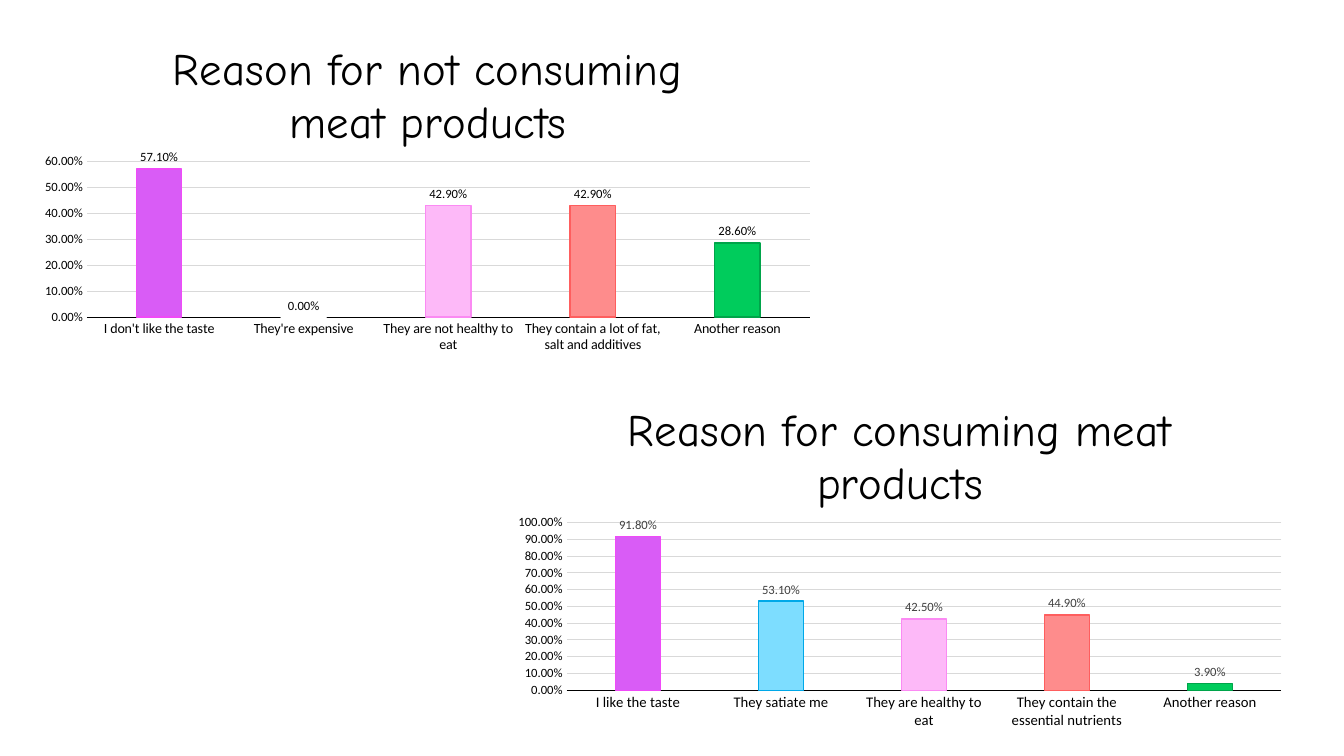
from pptx import Presentation
from pptx.chart.data import CategoryChartData
from pptx.dml.color import RGBColor
from pptx.enum.chart import XL_CHART_TYPE, XL_LABEL_POSITION, XL_TICK_MARK
from pptx.oxml import parse_xml
from pptx.oxml.ns import nsdecls
from pptx.util import Pt

COLUMNS = XL_CHART_TYPE.COLUMN_CLUSTERED
OUTSIDE_END = XL_LABEL_POSITION.OUTSIDE_END
NO_TICK = XL_TICK_MARK.NONE

COLORS = {
    "text": "000000", "muted": "404040", "grid": "D9D9D9", "series": "4FD1FF",
    "purple": "D95CF6", "purple_edge": "F04AF8",
    "blue": "7DDDFF", "blue_edge": "00A8E8",
    "pink": "FDB9F8", "pink_edge": "FB8AF3",
    "red": "FE8C8C", "red_edge": "FE5E5E",
    "green": "00CC5C", "green_edge": "00A44A",
    "white": "FFFFFF", "white_edge": "FFFFFF",
}
BODY_FONT, TITLE_FONT = "Calibri", "Comic Neue"
PERCENT = "0.00%"

CHARTS = [
    {
        "title": "Reason for consuming meat products",
        "box": (359.3, 271.4, 567.4, 254.9),
        "plot": (0.08, 0.4, 0.9, 0.47),
        "top": 1.0, "category_size": 10.5, "label_color": "muted",
        "bars": [
            ("I like the taste", 0.918, "purple"),
            ("They satiate me", 0.531, "blue"),
            ("They are healthy to eat", 0.425, "pink"),
            ("They contain the essential nutrients", 0.449, "red"),
            ("Another reason", 0.039, "green"),
        ],
    },
    {
        "title": "Reason for not consuming meat products",
        "box": (22.3, 13.7, 567.4, 241.9),
        "plot": (0.07, 0.42, 0.91, 0.46),
        "top": 0.6, "category_size": 10, "label_color": "text",
        "bars": [
            ("I don't like the taste", 0.571, "purple"),
            ("They're expensive", 0, "white"),
            ("They are not healthy to eat", 0.429, "pink"),
            ("They contain a lot of fat, salt and additives", 0.429, "red"),
            ("Another reason", 0.286, "green"),
        ],
    },
]


def rgb(name):
    return RGBColor.from_string(COLORS[name])


def set_font(font, size, color="text", name=BODY_FONT):
    font.size, font.name, font.bold = Pt(size), name, False
    font.color.rgb = rgb(color)


def set_fill(fill, color):
    fill.solid()
    fill.fore_color.rgb = rgb(color)


def set_line(line, color, width):
    set_fill(line.fill, color)
    line.width = Pt(width)


def set_title(chart, text):
    tf = chart.chart_title.text_frame
    r = tf.paragraphs[0].add_run()
    r.text = text
    set_font(r.font, 32, name=TITLE_FONT)
    chart.chart_title.include_in_layout = False


def place_plot(chart, plot):
    parts = "".join(f'<c:{key} val="{value}"/>' for key, value in zip("xywh", plot))
    layout = parse_xml(
        f'<c:layout {nsdecls("c")}><c:manualLayout><c:layoutTarget val="inner"/>'
        f'<c:xMode val="edge"/><c:yMode val="edge"/>{parts}'
        '</c:manualLayout></c:layout>')
    area = chart.element.chart.plotArea
    for old in area.findall(layout.tag):
        area.remove(old)
    area.insert(0, layout)


def style_axes(chart, item):
    category, value = chart.category_axis, chart.value_axis
    for axis, size in ((category, item["category_size"]), (value, 9)):
        axis.major_tick_mark = axis.minor_tick_mark = NO_TICK
        set_font(axis.tick_labels.font, size)
    set_line(category.format.line, "text", 0.75)
    value.format.line.fill.background()
    set_line(value.major_gridlines.format.line, "grid", 0.75)
    value.minimum_scale, value.maximum_scale, value.major_unit = 0, item["top"], 0.1
    value.tick_labels.number_format = PERCENT
    value.tick_labels.number_format_is_linked = False


def style_bars(plot, item):
    plot.gap_width, plot.overlap, plot.vary_by_categories = 219, -27, False
    series = plot.series[0]
    set_fill(series.format.fill, "series")
    for i, (_, _, color) in enumerate(item["bars"]):
        point = series.points[i].format
        set_fill(point.fill, color)
        set_line(point.line, f"{color}_edge", 1)
    labels = series.data_labels
    labels.show_value, labels.position = True, OUTSIDE_END
    labels.number_format, labels.number_format_is_linked = PERCENT, False
    set_font(labels.font, 9, item["label_color"])


def add_reason_chart(s, item):
    data = CategoryChartData(number_format=PERCENT)
    data.categories = [bar[0] for bar in item["bars"]]
    data.add_series("Series 1", [bar[1] for bar in item["bars"]])
    chart = s.shapes.add_chart(COLUMNS, *map(Pt, item["box"]), data).chart
    chart.has_legend = False
    set_font(chart.font, 10)
    set_title(chart, item["title"])
    place_plot(chart, item["plot"])
    style_axes(chart, item)
    style_bars(chart.plots[0], item)


def main():
    """Build the slide with two charts of reasons for eating or avoiding meat."""
    prs = Presentation()
    prs.slide_width, prs.slide_height = Pt(960), Pt(540)
    s = prs.slides.add_slide(prs.slide_layouts[6])
    set_fill(s.background.fill, "white")
    for item in CHARTS:
        add_reason_chart(s, item)
    prs.save("out.pptx")


if __name__ == "__main__":
    main()
